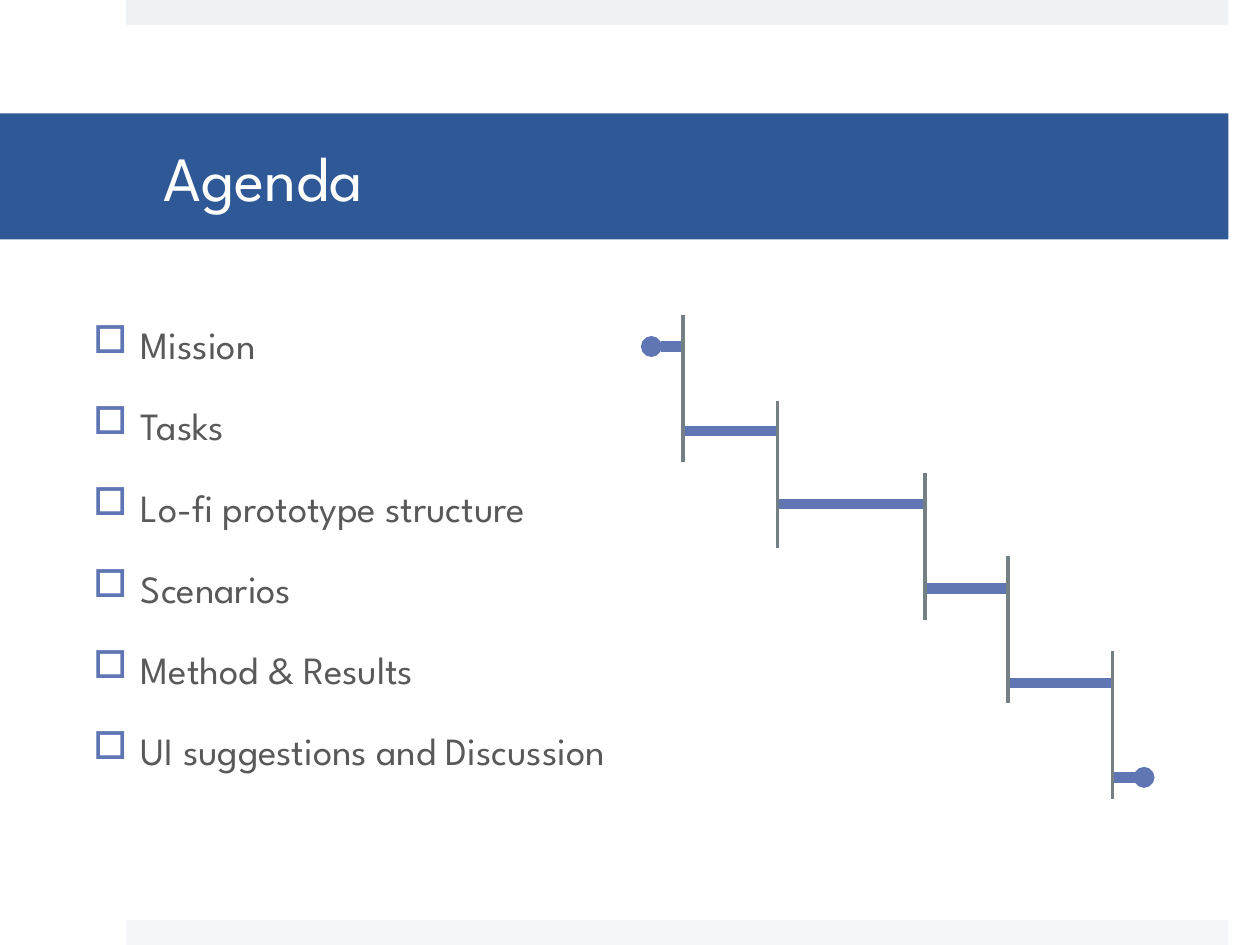
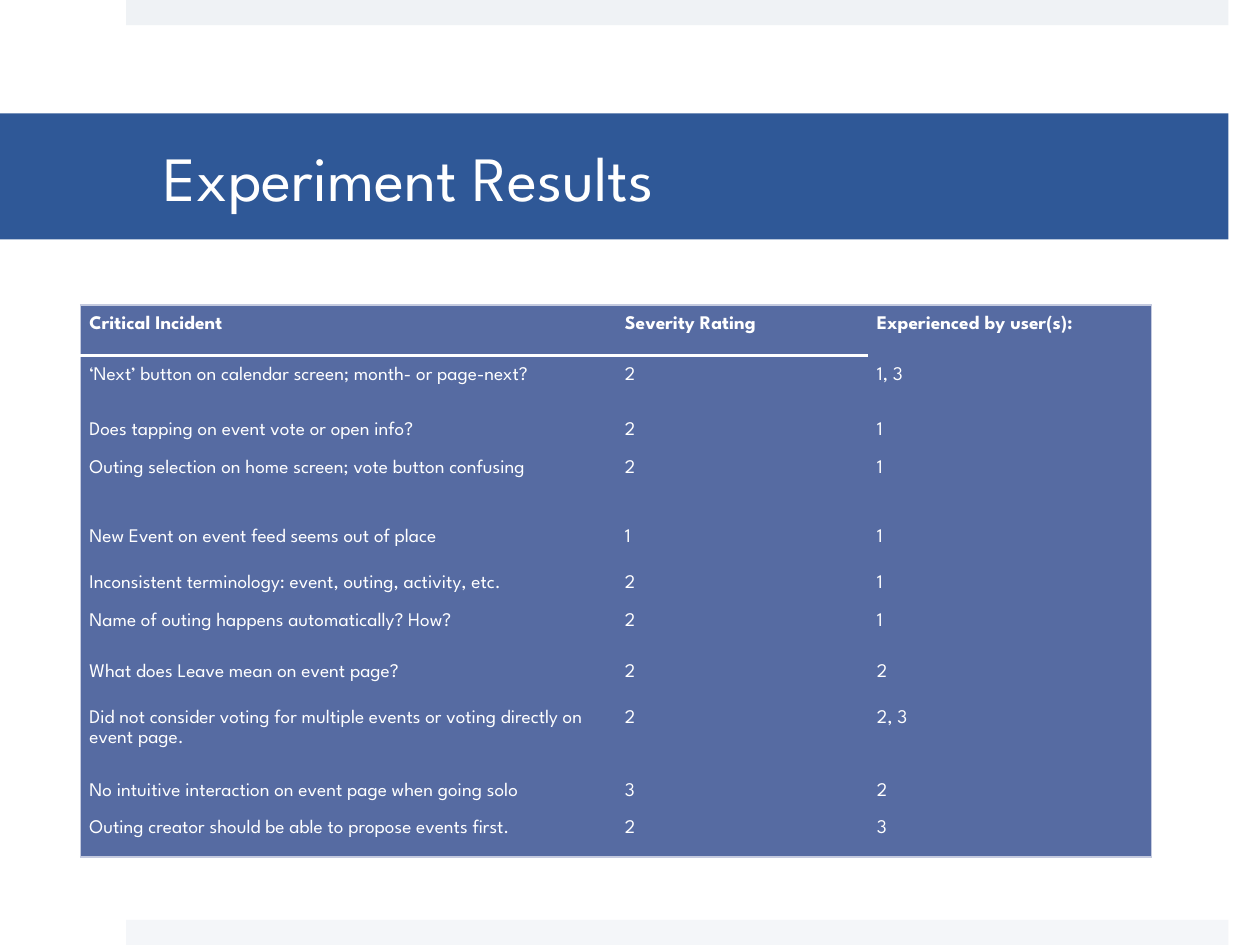
from dataclasses import dataclass
from lxml.etree import SubElement as Sub
from pptx import Presentation
from pptx.dml.color import RGBColor as Rgb
from pptx.enum.shapes import MSO_CONNECTOR as Conn, MSO_SHAPE as Form
from pptx.enum.text import MSO_ANCHOR as Anchor, PP_ALIGN as Align
from pptx.oxml.ns import qn
from pptx.util import Inches, Pt


@dataclass(frozen=True)
class Theme:
    font: str = "League Spartan"
    white: str = "FFFFFF"
    top: str = "EFF2F5"
    foot: str = "F4F6F9"
    band: str = "2F5897"
    step: str = "6076B4"
    post: str = "758085"
    text: str = "595959"
    cell: str = "566BA2"
    edge: str = "C4CADF"
    title: float = 36
    body: float = 22
    small: float = 11
    lead: float = 26.4
    gap: float = 20


T = Theme()

AGENDA = [
    "Mission",
    "Tasks",
    "Lo-fi prototype structure",
    "Scenarios",
    "Method & Results",
    "UI suggestions and Discussion",
]
ENDS = (5.17, 9.08)
POSTS = [(5.42, 2.5), (6.17, 3.18), (7.34, 3.75), (8, 4.41), (8.83, 5.17)]
TALL = 1.17
LEVELS = [2.75, 3.42, 4, 4.67, 5.42, 6.17]

HEAD = ("Critical Incident", "Severity Rating", "Experienced by user(s):")
ROWS = [
    ("‘Next’ button on calendar screen; month- or page-next?", "2", "1, 3"),
    ("Does tapping on event vote or open info?", "2", "1"),
    ("Outing selection on home screen; vote button confusing", "2", "1"),
    ("New Event on event feed seems out of place", "1", "1"),
    ("Inconsistent terminology: event, outing, activity, etc.", "2", "1"),
    ("Name of outing happens automatically? How?", "2", "1"),
    ("What does Leave mean on event page?", "2", "2"),
    ("Did not consider voting for multiple events or voting directly on event page.", "2", "2, 3"),
    ("No intuitive interaction on event page when going solo", "3", "2"),
    ("Outing creator should be able to propose events first.", "2", "3"),
]
WIDTHS = (4.25, 2, 2.25)
HEIGHTS = (0.4, 0.44, 0.29, 0.55, 0.36, 0.28, 0.41, 0.36, 0.58, 0.29, 0.38)
PLAIN = "{2D5ABB26-0587-4C30-8999-92F81FD0307C}"


def box(*sizes):
    return [Inches(n) for n in sizes]


def hue(code):
    return Rgb.from_string(code)


def write(para, text, size, color, bold=False):
    run = para.add_run()
    run.text = text
    font = run.font
    font.name, font.size, font.bold = T.font, Pt(size), bold
    font.color.rgb = hue(color)


def inset(part, left, top, right, low):
    part.margin_left, part.margin_top, part.margin_right, part.margin_bottom = box(left, top, right, low)


def bar(slide, color, *spot):
    shape = slide.shapes.add_shape(Form.RECTANGLE, *box(*spot))
    shape.shadow.inherit = False
    shape.fill.solid()
    shape.fill.fore_color.rgb = hue(color)
    shape.line.fill.background()
    return shape


def page(deck, title):
    slide = deck.slides.add_slide(deck.slide_layouts[6])
    bar(slide, T.top, 1, 0, 8.75, 0.2)
    bar(slide, T.foot, 1, 7.3, 8.75, 0.2)
    frame = bar(slide, T.band, 0, 0.9, 9.75, 1).text_frame
    frame.word_wrap = True
    frame.vertical_anchor = Anchor.MIDDLE
    inset(frame, 1.3, 0.05, 0.3, 0.05)
    para = frame.paragraphs[0]
    para.alignment = Align.LEFT
    write(para, title, T.title, T.white)
    return slide


def line(slide, start, end, color, width, dot=None):
    link = slide.shapes.add_connector(Conn.STRAIGHT, *box(*start, *end))
    link.line.color.rgb = hue(color)
    link.line.width = Pt(width)
    props = link.element.spPr
    if dot:
        Sub(props.find(qn("a:ln")), qn(dot), type="oval", w="sm", len="sm")
    Sub(props, qn("a:effectLst"))


def bullet(para):
    props = para._p.get_or_add_pPr()
    props.set("marL", str(Inches(0.38)))
    props.set("indent", str(-Inches(0.38)))
    Sub(Sub(props, qn("a:buClr")), qn("a:srgbClr"), val=T.step)
    Sub(props, qn("a:buChar"), char="□")


def agenda(deck):
    slide = page(deck, "Agenda")
    frame = slide.shapes.add_textbox(*box(0.64, 2.5, 8.32, 4.01)).text_frame
    frame.word_wrap = True
    for num, text in enumerate(AGENDA):
        para = frame.add_paragraph() if num else frame.paragraphs[0]
        para.line_spacing = Pt(T.lead)
        para.space_before = Pt(T.gap if num else 0)
        bullet(para)
        write(para, text, T.body, T.text)
    stops = [ENDS[0], *(x for x, _ in POSTS), ENDS[1]]
    dots = {0: "a:headEnd", len(LEVELS) - 1: "a:tailEnd"}
    for num, (left, right, y) in enumerate(zip(stops, stops[1:], LEVELS)):
        line(slide, (left, y), (right, y), T.step, 6, dots.get(num))
    for x, y in POSTS:
        line(slide, (x, y), (x, y + TALL), T.post, 2)


def border(cell, sides):
    props = cell._tc.get_or_add_tcPr()
    for spot, side in enumerate("LRTB"):
        color, width = sides.get(side, (None, 0))
        edge = Sub(props, qn("a:ln" + side), w=str(Pt(width)))
        if color:
            Sub(Sub(edge, qn("a:solidFill")), qn("a:srgbClr"), val=color)
        else:
            Sub(edge, qn("a:noFill"))
        props.insert(spot, edge)


def results(deck):
    slide = page(deck, "Experiment Results")
    data = [HEAD, *ROWS]
    last, end = len(data) - 1, len(HEAD) - 1
    spot = box(0.64, 2.42, sum(WIDTHS), sum(HEIGHTS))
    shape = slide.shapes.add_table(len(data), len(HEAD), *spot)
    grid = shape.table
    grid.first_row = grid.horz_banding = False
    for style in shape.element.iter(qn("a:tableStyleId")):
        style.text = PLAIN
    for col, width in zip(grid.columns, WIDTHS):
        col.width = Inches(width)
    for row, height in zip(grid.rows, HEIGHTS):
        row.height = Inches(height)
    rim, rule = (T.edge, 1), (T.white, 2)
    for r, row in enumerate(data):
        for c, text in enumerate(row):
            cell = grid.cell(r, c)
            cell.fill.solid()
            cell.fill.fore_color.rgb = hue(T.cell)
            inset(cell, 0.07, 0.07, 0.07, 0.07)
            para = cell.text_frame.paragraphs[0]
            para.line_spacing = 1.15
            write(para, text, T.small, T.white, r == 0)
            tests = [
                ("L", c == 0, rim),
                ("R", c == end, rim),
                ("T", r == 0, rim),
                ("B", r == last, rim),
                ("B", r == 0 and c < end, rule),
                ("T", r == 1 and c < end, rule),
            ]
            border(cell, {side: pen for side, on, pen in tests if on})


def main():
    deck = Presentation()
    deck.slide_width, deck.slide_height = box(10, 7.5)
    agenda(deck)
    results(deck)
    deck.save("out.pptx")


if __name__ == "__main__":
    main()
